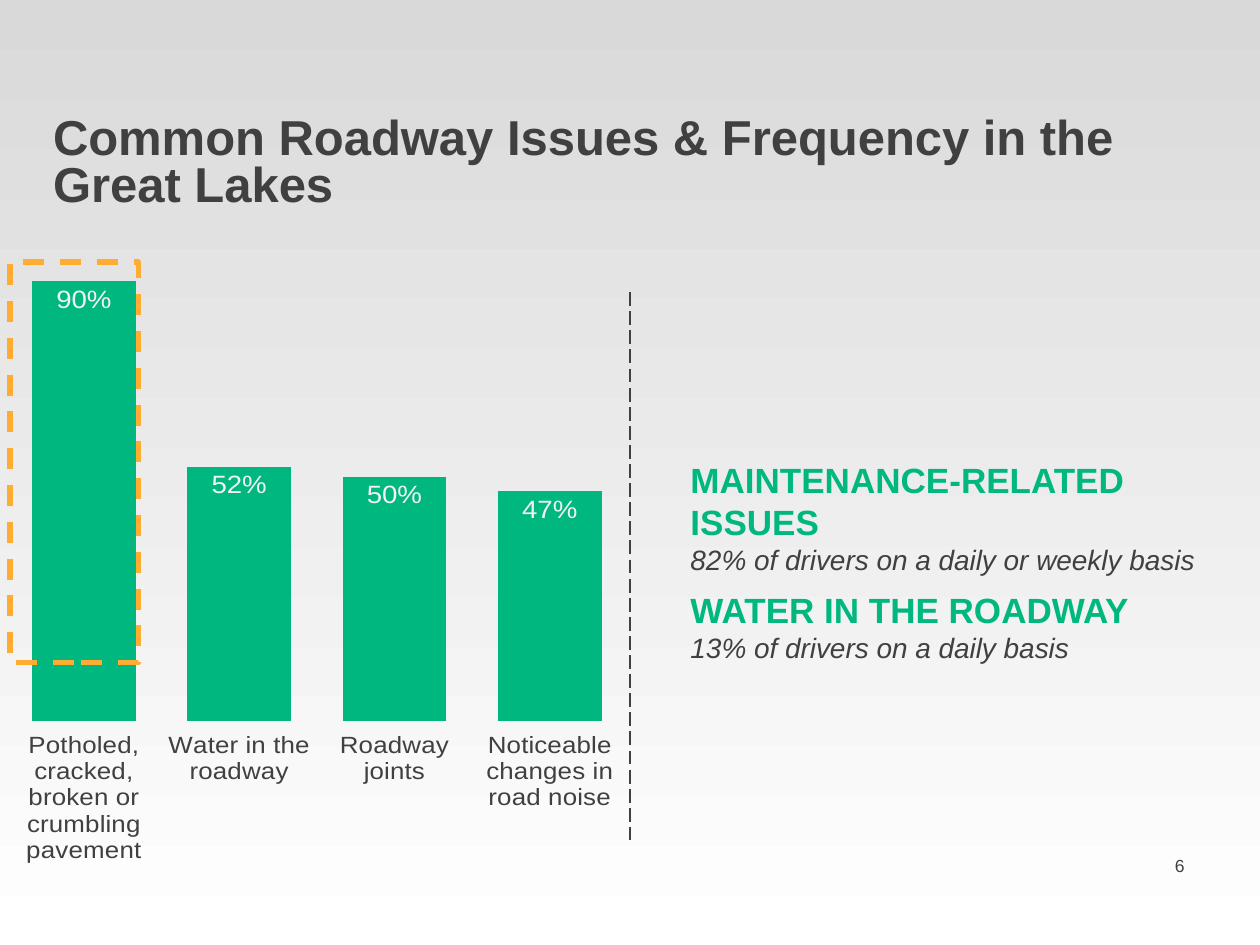
"""Build the slide on common roadway issues in the Great Lakes."""
from lxml import etree
from pptx import Presentation
from pptx import util as u
from pptx.chart import data
from pptx.dml.color import RGBColor
from pptx.enum import chart as charts, dml, shapes, text
from pptx.oxml import ns

GREEN, GREY, ORANGE = "00B87F", "404040", "FFAC33"


def paint(target, value):
    target.rgb = RGBColor.from_string(value)


def write(para, words, size=16, color=GREY, bold=False, italic=False, align=None, spacing=None):
    para.alignment = align
    para.line_spacing = spacing
    span = para.add_run()
    span.text = words
    span.font.name = "Arial"
    span.font.size = u.Pt(size)
    span.font.bold = bold
    span.font.italic = italic
    paint(span.font.color, color)


deck = Presentation()
deck.slide_width, deck.slide_height = u.Cm(25.4), u.Cm(19.05)
page = deck.slides.add_slide(deck.slide_layouts[6])

backdrop = page.background.fill
backdrop.gradient()
backdrop.gradient_angle = 90
for stop, position, color in zip(backdrop.gradient_stops, (0, 1), ("FFFFFF", "D9D9D9")):
    stop.position = position
    paint(stop.color, color)

title = page.shapes.add_textbox(u.Cm(1.07), u.Cm(1.42), u.Cm(23.01), u.Cm(3.81)).text_frame
title.word_wrap = True
title.vertical_anchor = text.MSO_ANCHOR.MIDDLE
title.margin_left = title.margin_right = title.margin_top = title.margin_bottom = 0
write(title.paragraphs[0], "Common Roadway Issues & Frequency in the Great Lakes",
      size=28, bold=True, spacing=0.8)

number = page.shapes.add_textbox(u.Cm(18.21), u.Cm(16.94), u.Cm(5.92), u.Cm(1.02)).text_frame
number.word_wrap = True
number.vertical_anchor = text.MSO_ANCHOR.MIDDLE
write(number.paragraphs[0], "6", size=10, align=text.PP_ALIGN.RIGHT)

divider = page.shapes.add_connector(
    shapes.MSO_CONNECTOR.STRAIGHT, u.Cm(12.7), u.Cm(5.89), u.Cm(12.7), u.Cm(16.94))
paint(divider.line.color, GREY)
divider.line.width = u.Pt(1)
divider.line.dash_style = dml.MSO_LINE.LONG_DASH
etree.SubElement(divider._element.spPr, ns.qn("a:effectLst"))

issues = data.CategoryChartData(number_format="0%")
issues.categories = ["Potholed, cracked, broken or crumbling pavement", "Water in the roadway",
                     "Roadway joints", "Noticeable changes in road noise"]
issues.add_series("Series 1", (0.9, 0.52, 0.5, 0.47))
chart = page.shapes.add_chart(charts.XL_CHART_TYPE.COLUMN_CLUSTERED, u.Cm(0), u.Cm(4.45),
                              u.Cm(12.65), u.Cm(12.95), issues).chart
chart.has_title = False
chart.has_legend = False
chart.font.name = "Cabin"
chart.font.size = u.Pt(17.8)

plot = chart.plots[0]
plot.gap_width = 50
plot.vary_by_categories = False
bars = plot.series[0]
bars.format.fill.solid()
paint(bars.format.fill.fore_color, GREEN)

labels = bars.data_labels
labels.show_value = True
labels.position = charts.XL_LABEL_POSITION.INSIDE_END
labels.number_format = "0%"
labels.number_format_is_linked = False
names = chart.category_axis
names.format.line.fill.background()
for font, size, color in ((labels.font, 15.8, "F2F2F2"), (names.tick_labels.font, 14.8, GREY)):
    font.name = "Arial"
    font.size = u.Pt(size)
    paint(font.color, color)

scale = chart.value_axis
scale.visible = False
scale.has_major_gridlines = False
scale.minimum_scale, scale.maximum_scale = 0, 1

area = chart._chartSpace.chart.plotArea
for old in area.findall(ns.qn("c:layout")):
    area.remove(old)
layout = etree.Element(ns.qn("c:layout"))
manual = etree.SubElement(layout, ns.qn("c:manualLayout"))
for tag, value in (("layoutTarget", "inner"), ("xMode", "edge"), ("yMode", "edge"),
                   ("x", "0.01"), ("y", "0.02"), ("w", "0.99"), ("h", "0.84")):
    etree.SubElement(manual, ns.qn(f"c:{tag}")).set("val", value)
area.insert(0, layout)

highlight = page.shapes.add_shape(
    shapes.MSO_SHAPE.RECTANGLE, u.Cm(0.2), u.Cm(5.28), u.Cm(2.59), u.Cm(8.08))
highlight.shadow.inherit = False
highlight.fill.background()
paint(highlight.line.color, ORANGE)
highlight.line.width = u.Pt(3)
highlight.line.dash_style = dml.MSO_LINE.DASH

for top, height, heading, detail in (
        (9.12, 2.64, "MAINTENANCE-RELATED ISSUES", "82% of drivers on a daily or weekly basis"),
        (11.73, 1.8, "WATER IN THE ROADWAY", "13% of drivers on a daily basis")):
    box = page.shapes.add_textbox(u.Cm(13.67), u.Cm(top), u.Cm(11.13), u.Cm(height)).text_frame
    box.word_wrap = True
    box.auto_size = text.MSO_AUTO_SIZE.SHAPE_TO_FIT_TEXT
    write(box.paragraphs[0], heading, size=20, color=GREEN, bold=True)
    write(box.add_paragraph(), detail, italic=True)

deck.save("out.pptx")
